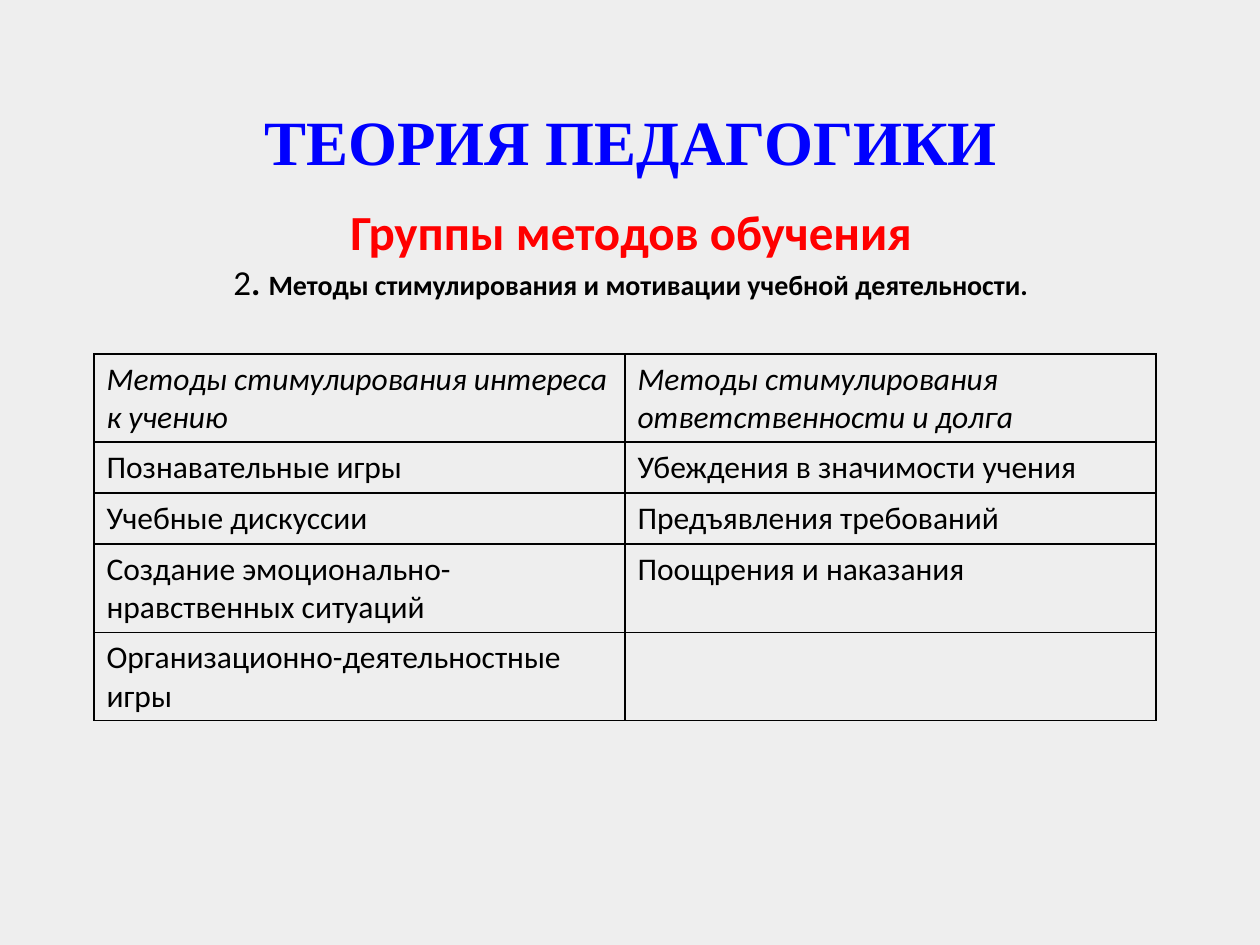
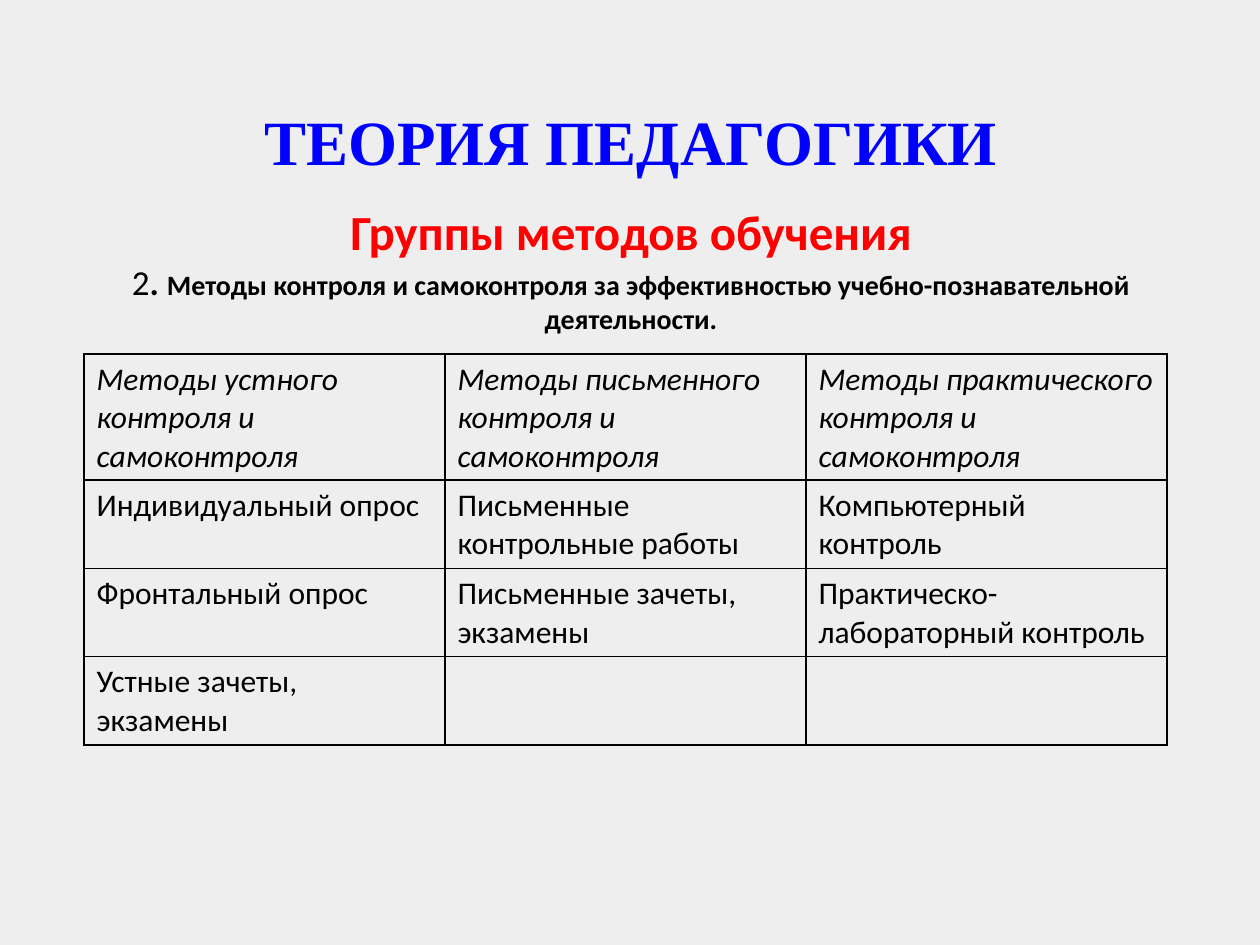
"""Build two slides on groups of teaching methods."""
from dataclasses import dataclass

from lxml import etree
from pptx import Presentation
from pptx.dml.color import RGBColor
from pptx.enum.text import MSO_ANCHOR, PP_ALIGN
from pptx.oxml.ns import qn
from pptx.util import Emu, Pt

CENTER = PP_ALIGN.CENTER
TOP = MSO_ANCHOR.TOP
BOTTOM = MSO_ANCHOR.BOTTOM
SCALE = 914400 / 126
BLANK = 6
COLORS = {"back": "EEEEEE", "title": "0000FF", "head": "FF0000", "text": "000000"}
SANS = "Calibri"
SERIF = "Times New Roman"
TITLE = "ТЕОРИЯ ПЕДАГОГИКИ"
HEAD = "Группы методов обучения"
TABLE_TOP = 354
ROW = 51


@dataclass
class Box:
    left: int
    top: int
    width: int
    height: int


@dataclass
class Style:
    size: int
    color: str = "text"
    bold: bool = False
    italic: bool = False
    face: str = SANS


@dataclass
class Page:
    topic: str
    left: int
    column: int
    rows: list[list[str]]


TITLE_BOX = Box(64, 26, 1134, 158)
BODY_BOX = Box(64, 195, 1134, 150)

PAGES = [
    Page("Методы стимулирования и мотивации учебной деятельности.", 94, 531, [
        ["Методы стимулирования интереса к учению",
         "Методы стимулирования ответственности и долга"],
        ["Познавательные игры", "Убеждения в значимости учения"],
        ["Учебные дискуссии", "Предъявления требований"],
        ["Создание эмоционально-нравственных ситуаций", "Поощрения и наказания"],
        ["Организационно-деятельностные игры", ""],
    ]),
    Page("Методы контроля и самоконтроля за эффективностью "
         "учебно-познавательной деятельности.", 84, 361, [
             ["Методы устного контроля и самоконтроля",
              "Методы письменного контроля и самоконтроля",
              "Методы практического контроля и самоконтроля"],
             ["Индивидуальный опрос", "Письменные контрольные работы",
              "Компьютерный контроль"],
             ["Фронтальный опрос", "Письменные зачеты, экзамены",
              "Практическо-\nлабораторный контроль"],
             ["Устные зачеты, экзамены", "", ""],
         ]),
]


def px(value: int) -> Emu:
    """Turn pixels into EMU."""
    return Emu(round(value * SCALE))


def paint(font, style: Style) -> None:
    """Apply a style to a font."""
    font.name = style.face
    font.size = Pt(style.size)
    font.bold = style.bold
    font.italic = style.italic
    font.color.rgb = RGBColor.from_string(COLORS[style.color])


def add_text(slide, box: Box, anchor, lines: list[list[tuple[str, Style]]]) -> None:
    """Add a centred text box with styled runs."""
    shape = slide.shapes.add_textbox(
        px(box.left), px(box.top), px(box.width), px(box.height))
    frame = shape.text_frame
    frame.word_wrap = True
    frame.vertical_anchor = anchor
    frame.text = "\n" * (len(lines) - 1)
    for para, parts in zip(frame.paragraphs, lines):
        para.alignment = CENTER
        for text, style in parts:
            run = para.add_run()
            run.text = text
            paint(run.font, style)


def add_edges(cell) -> None:
    """Draw thin lines on all sides of a cell."""
    props = cell._tc.get_or_add_tcPr()
    for side in ("lnL", "lnR", "lnT", "lnB"):
        line = etree.SubElement(props, qn(f"a:{side}"), w=str(Pt(1)))
        fill = etree.SubElement(line, qn("a:solidFill"))
        etree.SubElement(fill, qn("a:srgbClr"), val=COLORS["text"])


def add_grid(slide, page: Page) -> None:
    """Add the table of methods."""
    count, wide = len(page.rows), len(page.rows[0])
    table = slide.shapes.add_table(
        count, wide, px(page.left), px(TABLE_TOP),
        px(page.column * wide), px(ROW * count)).table
    table.first_row = False
    table.horz_banding = False
    for column in table.columns:
        column.width = px(page.column)
    for index, row in enumerate(page.rows):
        style = Style(18, italic=index == 0)
        for place, text in enumerate(row):
            cell = table.cell(index, place)
            add_edges(cell)
            cell.fill.background()
            cell.text_frame.text = text
            for para in cell.text_frame.paragraphs:
                for run in para.runs:
                    paint(run.font, style)


def add_page(deck, page: Page) -> None:
    """Add one slide with title, topic and table."""
    slide = deck.slides.add_slide(deck.slide_layouts[BLANK])
    fill = slide.background.fill
    fill.solid()
    fill.fore_color.rgb = RGBColor.from_string(COLORS["back"])
    add_text(slide, BODY_BOX, TOP, [
        [(HEAD, Style(28, "head", True))],
        [("2", Style(20)), (". ", Style(20, bold=True)),
         (page.topic, Style(16, bold=True))],
    ])
    add_text(slide, TITLE_BOX, BOTTOM, [[(TITLE, Style(36, "title", True, face=SERIF))]])
    add_grid(slide, page)


def main() -> None:
    """Build and save the deck."""
    deck = Presentation()
    deck.slide_width = px(1260)
    deck.slide_height = px(945)
    for page in PAGES:
        add_page(deck, page)
    deck.save("out.pptx")


if __name__ == "__main__":
    main()
